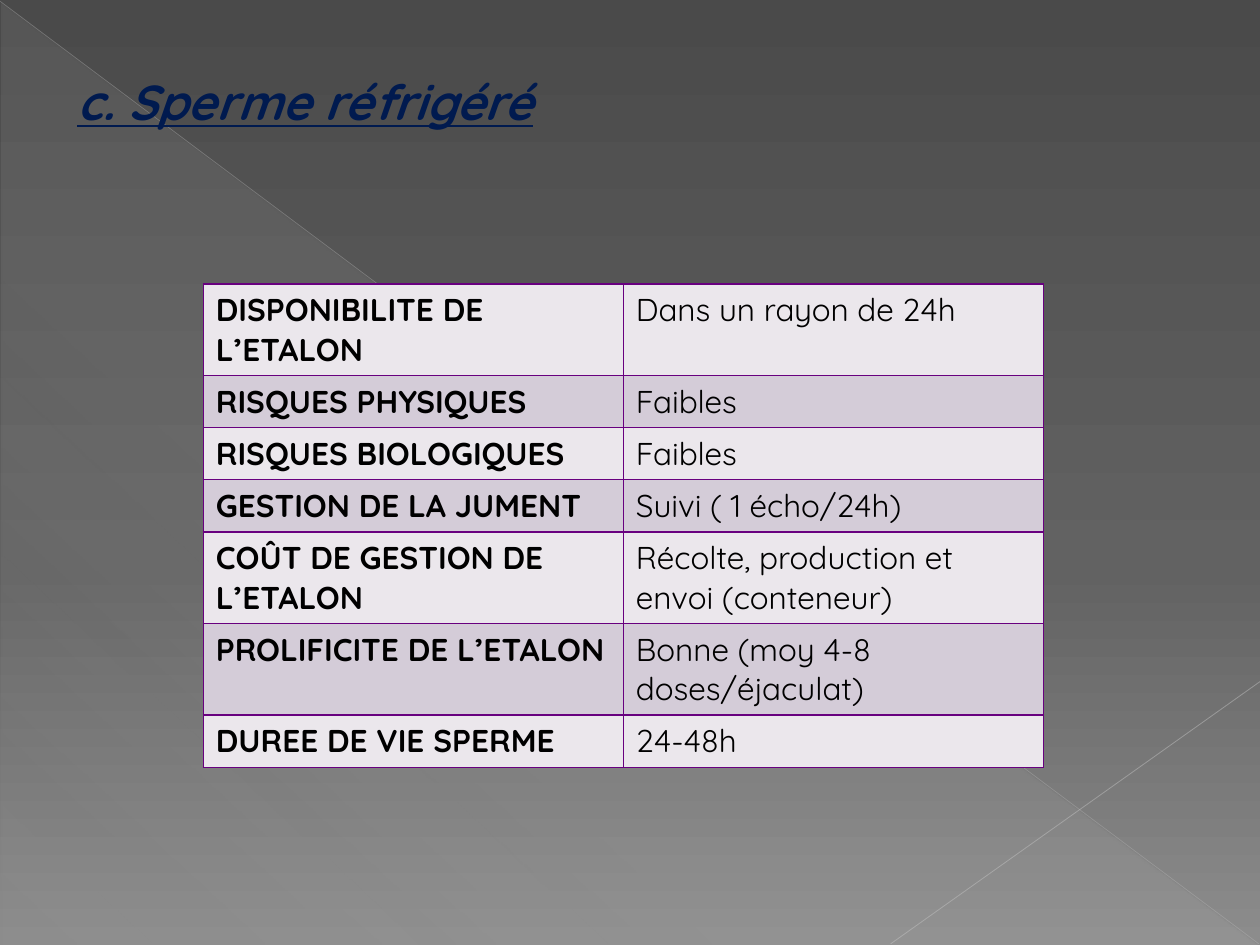
from typing import NamedTuple

from lxml import etree
from pptx import Presentation
from pptx import util as u
from pptx.dml.color import RGBColor
from pptx.enum import shapes, text
from pptx.oxml import ns

Pt = u.Pt
FONT = "Quicksand"
BLACK = RGBColor(0x00, 0x00, 0x00)
NAVY = RGBColor(0x00, 0x1A, 0x4F)
PURPLE = RGBColor(0x68, 0x00, 0x7F)
BANDS = (RGBColor(0xEB, 0xE7, 0xEC), RGBColor(0xD4, 0xCC, 0xD8))
SKY_TOP = RGBColor(0x4A, 0x4A, 0x4A)
SKY_MIDDLE = RGBColor(0x62, 0x62, 0x62)
SKY_BOTTOM = RGBColor(0x8C, 0x8C, 0x8C)
VEIL = RGBColor(0xD2, 0xD2, 0xD2)
RAY_DARK = RGBColor(0xBF, 0xBF, 0xBF)
RAY_LIGHT = RGBColor(0xC6, 0xC6, 0xC6)


class Stop(NamedTuple):
    position: int
    color: RGBColor
    opacity: int = 100


class Ray(NamedTuple):
    start: tuple[float, float]
    end: tuple[float, float]
    color: RGBColor
    width: float
    opacity: int


class Criterion(NamedTuple):
    label: str
    value: str


RAYS = (
    Ray((0, 0.7), (719.3, 539.3), RAY_DARK, 0.39, 35),
    Ray((720, 389.5), (509, 539.3), RAY_LIGHT, 0.47, 45),
)
CRITERIA = (
    Criterion("DISPONIBILITE DE L’ETALON", "Dans un rayon de 24h"),
    Criterion("RISQUES PHYSIQUES", "Faibles"),
    Criterion("RISQUES BIOLOGIQUES", "Faibles"),
    Criterion("GESTION DE LA JUMENT", "Suivi ( 1 écho/24h)"),
    Criterion("COÛT DE GESTION DE L’ETALON", "Récolte, production et envoi (conteneur)"),
    Criterion("PROLIFICITE DE L’ETALON", "Bonne (moy 4-8 doses/éjaculat)"),
    Criterion("DUREE DE VIE SPERME", "24-48h"),
)


def add_child(parent, tag: str, **attributes):
    element = etree.SubElement(parent, ns.qn(tag))
    for name, value in attributes.items():
        element.set(name, str(value))
    return element


def add_color(parent, color: RGBColor, opacity: int = 100) -> None:
    element = add_child(parent, "a:srgbClr", val=color)
    if opacity < 100:
        add_child(element, "a:alpha", val=opacity * 1000)


def set_gradient(owner, fill, stops: tuple[Stop, ...], angle: int) -> None:
    """Give the fill inside owner a linear gradient, angle clockwise."""
    fill.solid()
    solid = owner.find(".//" + ns.qn("a:solidFill"))
    gradient = etree.Element(ns.qn("a:gradFill"), rotWithShape="1")
    stop_list = add_child(gradient, "a:gsLst")
    for stop in stops:
        element = add_child(stop_list, "a:gs", pos=stop.position * 1000)
        add_color(element, stop.color, stop.opacity)
    add_child(gradient, "a:lin", ang=angle * 60000, scaled=0)
    solid.getparent().replace(solid, gradient)


def add_run(paragraph, content: str, size: float, color: RGBColor, bold: bool):
    run = paragraph.add_run()
    run.text = content
    run.font.name = FONT
    run.font.size = Pt(size)
    run.font.bold = bold
    run.font.color.rgb = color
    return run


def draw_backdrop(slide) -> None:
    stops = (Stop(0, SKY_TOP), Stop(60, SKY_MIDDLE), Stop(100, SKY_BOTTOM))
    set_gradient(slide.element, slide.background.fill, stops, 90)
    veil = slide.shapes.add_shape(
        shapes.MSO_SHAPE.RIGHT_TRIANGLE, Pt(0.7), Pt(1.4), Pt(718.6), Pt(538.6))
    veil.shadow.inherit = False
    veil.line.fill.background()
    stops = (Stop(0, VEIL, 10), Stop(70, VEIL, 8), Stop(100, VEIL, 1))
    set_gradient(veil.element, veil.fill, stops, 133)


def draw_ray(slide, ray: Ray) -> None:
    connector = slide.shapes.add_connector(
        shapes.MSO_CONNECTOR.STRAIGHT, *map(Pt, ray.start + ray.end))
    connector.line.width = Pt(ray.width)
    connector.line.color.rgb = ray.color
    color = connector.element.spPr.find(".//" + ns.qn("a:srgbClr"))
    add_child(color, "a:alpha", val=ray.opacity * 1000)
    add_child(connector.element.spPr, "a:effectLst")


def fill_cell(cell, content: str, bold: bool, band: RGBColor) -> None:
    properties = cell._tc.get_or_add_tcPr()
    for side in ("a:lnL", "a:lnR", "a:lnT", "a:lnB"):
        border = add_child(properties, side, w=Pt(1))
        add_color(add_child(border, "a:solidFill"), PURPLE)
    cell.fill.solid()
    cell.fill.fore_color.rgb = band
    add_run(cell.text_frame.paragraphs[0], content, 18, BLACK, bold)


def draw_table(slide, criteria: tuple[Criterion, ...]) -> None:
    frame = slide.shapes.add_table(
        len(criteria), 2, Pt(116.2), Pt(162.2), Pt(480), Pt(29.2 * len(criteria)))
    table = frame.table
    table.first_row = False
    table.horz_banding = False
    for row, criterion in enumerate(criteria):
        band = BANDS[row % 2]
        fill_cell(table.cell(row, 0), criterion.label, True, band)
        fill_cell(table.cell(row, 1), criterion.value, False, band)


def draw_title(slide, content: str) -> None:
    box = slide.shapes.add_textbox(Pt(37), Pt(37.5), Pt(276.5), Pt(41))
    frame = box.text_frame
    frame.word_wrap = False
    frame.auto_size = text.MSO_AUTO_SIZE.SHAPE_TO_FIT_TEXT
    run = add_run(frame.paragraphs[0], content, 28, NAVY, True)
    run.font.italic = True
    run.font.underline = True


def main() -> None:
    presentation = Presentation()
    presentation.slide_width = Pt(720)
    presentation.slide_height = Pt(540)
    slide = presentation.slides.add_slide(presentation.slide_layouts[6])

    # Backdrop
    draw_backdrop(slide)
    for ray in RAYS:
        draw_ray(slide, ray)

    # Content
    draw_table(slide, CRITERIA)
    draw_title(slide, "c. Sperme réfrigéré")
    presentation.save("out.pptx")


if __name__ == "__main__":
    main()
